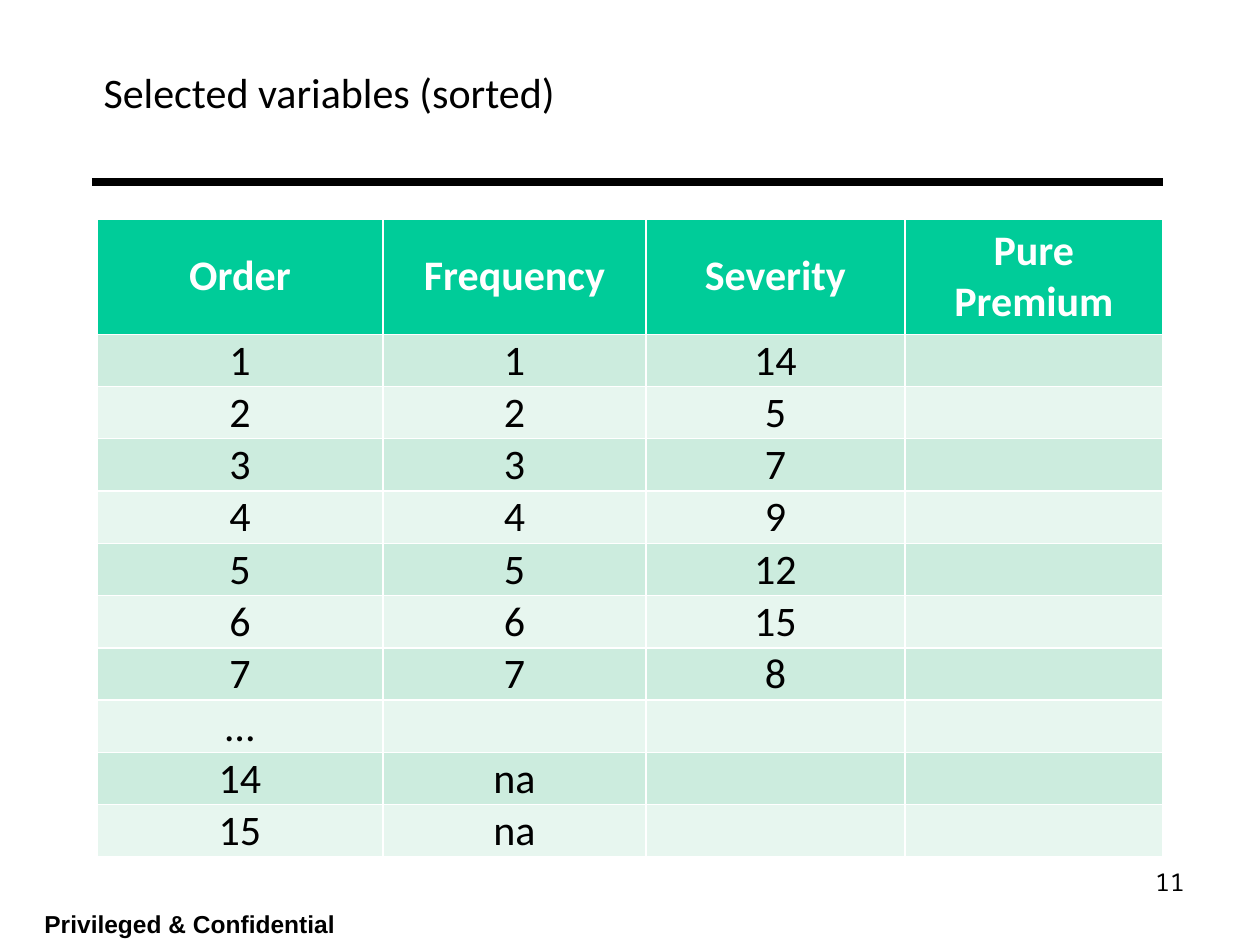
from pptx import Presentation
from pptx.dml.color import RGBColor
from pptx.enum.shapes import MSO_CONNECTOR
from pptx.enum.text import MSO_ANCHOR, MSO_AUTO_SIZE, PP_ALIGN
from pptx.oxml import parse_xml
from pptx.oxml.ns import nsdecls
from pptx.util import Pt

# Content
TITLE = "Selected variables (sorted)"
FOOTER = "Privileged & Confidential"
PAGE_NUMBER = "11"
HEADERS = ["Order", "Frequency", "Severity", "Pure Premium"]
ROWS = [
    ["1", "1", "14", ""],
    ["2", "2", "5", ""],
    ["3", "3", "7", ""],
    ["4", "4", "9", ""],
    ["5", "5", "12", ""],
    ["6", "6", "15", ""],
    ["7", "7", "8", ""],
    ["…", "", "", ""],
    ["14", "na", "", ""],
    ["15", "na", "", ""],
]

# Look and layout
BLACK = RGBColor(0x00, 0x00, 0x00)
WHITE = RGBColor(0xFF, 0xFF, 0xFF)
GREEN = RGBColor(0x00, 0xCC, 0x99)
BANDS = [RGBColor(0xCC, 0xEC, 0xDE), RGBColor(0xE7, 0xF6, 0xEF)]
COLUMN_WIDTHS = [286, 263, 259, 258]
HEADER_HEIGHT, ROW_HEIGHT = 114, 52
PX = 914400 // 126


def px(*lengths):
    return [length * PX for length in lengths]


def write(frame, text, font="Calibri", size=24, color=BLACK, bold=False,
          align=PP_ALIGN.LEFT):
    paragraph = frame.paragraphs[0]
    paragraph.alignment = align
    paragraph.font.size = Pt(size)
    if not text:
        return
    run = paragraph.add_run()
    run.text = text
    run.font.name = font
    run.font.size = Pt(size)
    run.font.bold = bold
    run.font.color.rgb = color


def add_text(slide, box, text, **text_format):
    frame = slide.shapes.add_textbox(*px(*box)).text_frame
    frame.word_wrap = True
    write(frame, text, **text_format)


def set_borders(cell, top, bottom):
    widths = {"lnL": 1, "lnR": 1, "lnT": top, "lnB": bottom}
    for tag, width in widths.items():
        cell._tc.get_or_add_tcPr().append(parse_xml(
            f'<a:{tag} {nsdecls("a")} w="{Pt(width)}"><a:solidFill>'
            f'<a:srgbClr val="{WHITE}"/></a:solidFill></a:{tag}>'))


def add_table(slide):
    cells = [HEADERS] + ROWS
    heights = [HEADER_HEIGHT] + [ROW_HEIGHT] * len(ROWS)
    table = slide.shapes.add_table(
        len(cells), len(HEADERS),
        *px(97, 219, sum(COLUMN_WIDTHS), sum(heights))).table
    for column, width in zip(table.columns, COLUMN_WIDTHS):
        column.width = width * PX
    for index, (row, height) in enumerate(zip(table.rows, heights)):
        row.height = height * PX
        header = index == 0
        for cell, text in zip(row.cells, cells[index]):
            cell.vertical_anchor = MSO_ANCHOR.MIDDLE
            if not header:
                cell.margin_left = cell.margin_right = cell.margin_top = PX
                cell.margin_bottom = 0
            set_borders(cell, top=0.75 if index == 1 else 1,
                        bottom=0.75 if header else 1)
            cell.fill.solid()
            cell.fill.fore_color.rgb = GREEN if header else BANDS[(index - 1) % 2]
            write(cell.text_frame, text, color=WHITE if header else BLACK,
                  bold=header, align=PP_ALIGN.CENTER)


def main():
    presentation = Presentation()
    presentation.slide_width, presentation.slide_height = px(1260, 945)
    slide = presentation.slides.add_slide(presentation.slide_layouts[5])

    # Title
    title = slide.shapes.title
    title.left, title.top, title.width, title.height = px(91, 0, 925, 184)
    title.text_frame.auto_size = MSO_AUTO_SIZE.NONE
    title.text_frame.vertical_anchor = MSO_ANCHOR.MIDDLE
    write(title.text_frame, TITLE)

    # Rule under the title
    rule = slide.shapes.add_connector(MSO_CONNECTOR.STRAIGHT,
                                      *px(92, 182, 1163, 182))
    rule.line.color.rgb = BLACK
    rule.line.width = Pt(4.5)
    rule._element.spPr.append(parse_xml(f'<a:effectLst {nsdecls("a")}/>'))

    # Table, footer and page number
    add_table(slide)
    add_text(slide, (32, 903, 325, 42), FOOTER, font="Arial", size=14, bold=True)
    add_text(slide, (903, 861, 294, 65), PAGE_NUMBER, font="Noto Sans Mono",
             size=14, align=PP_ALIGN.RIGHT)

    presentation.save("out.pptx")


if __name__ == "__main__":
    main()
